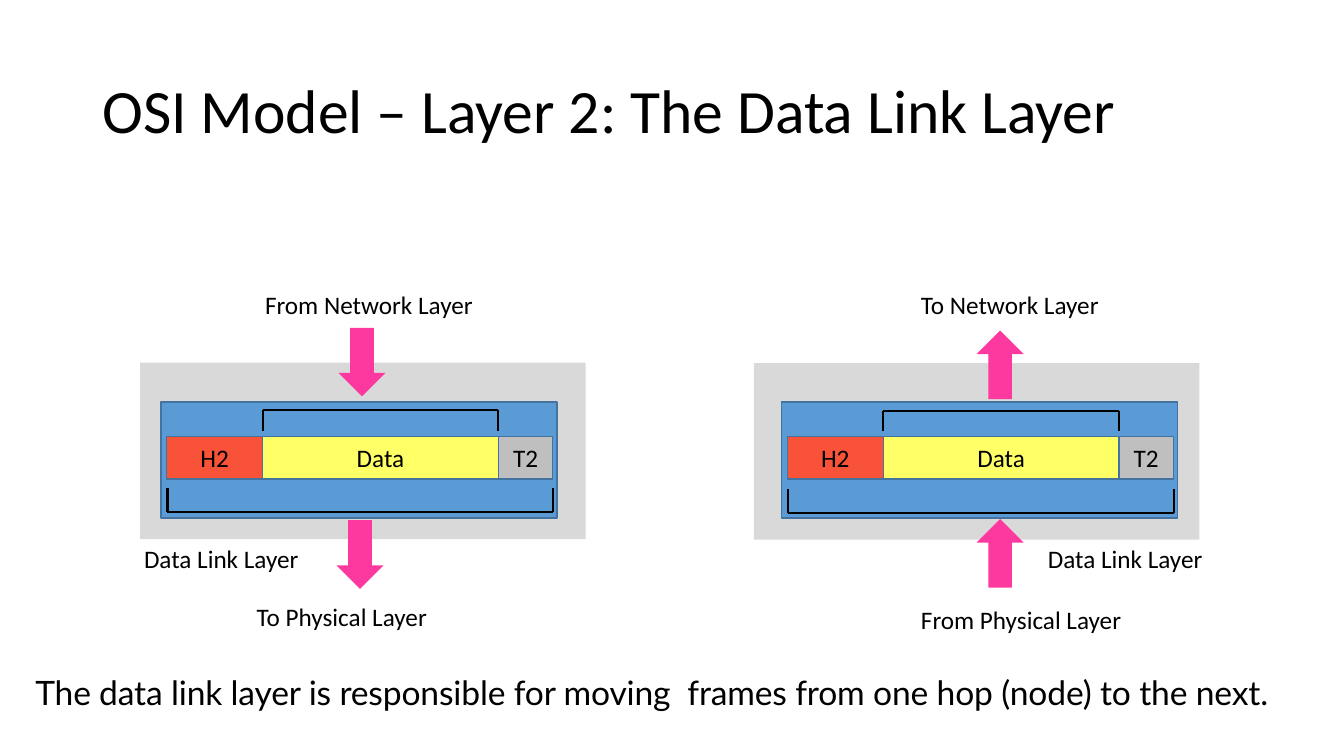
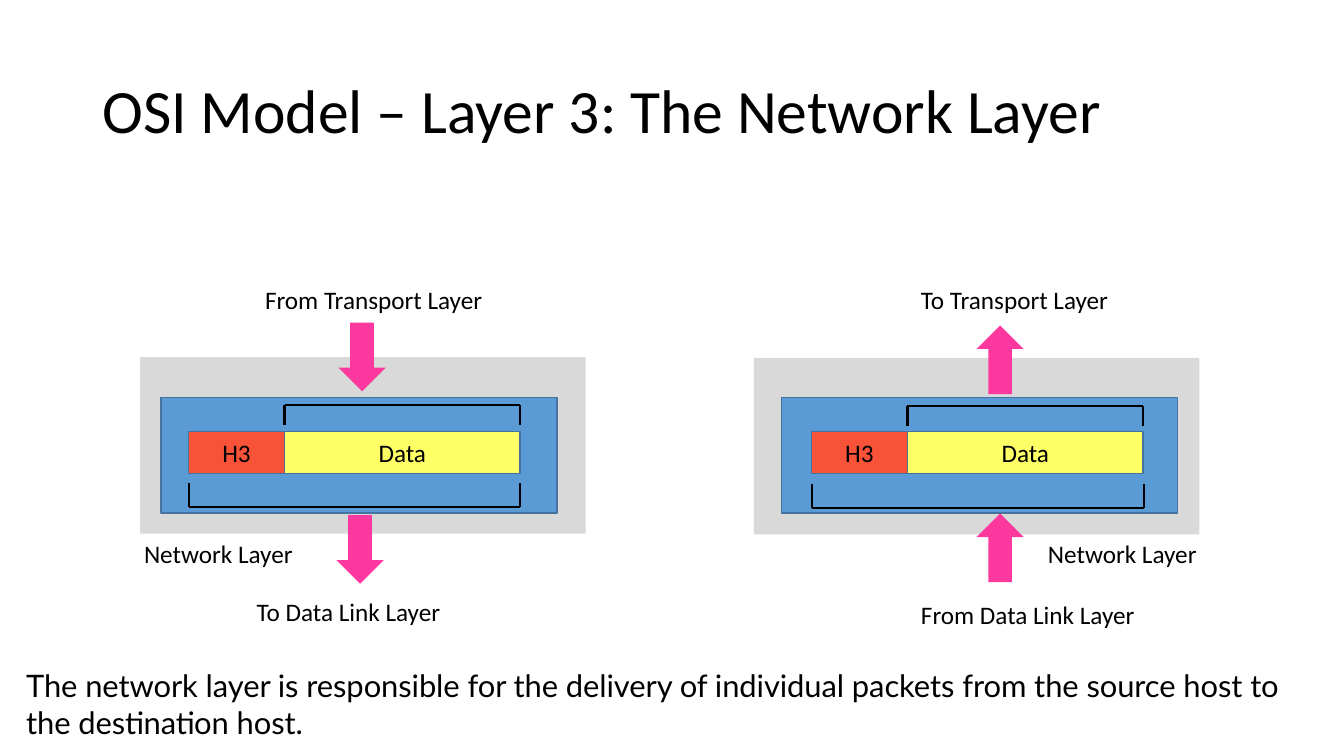
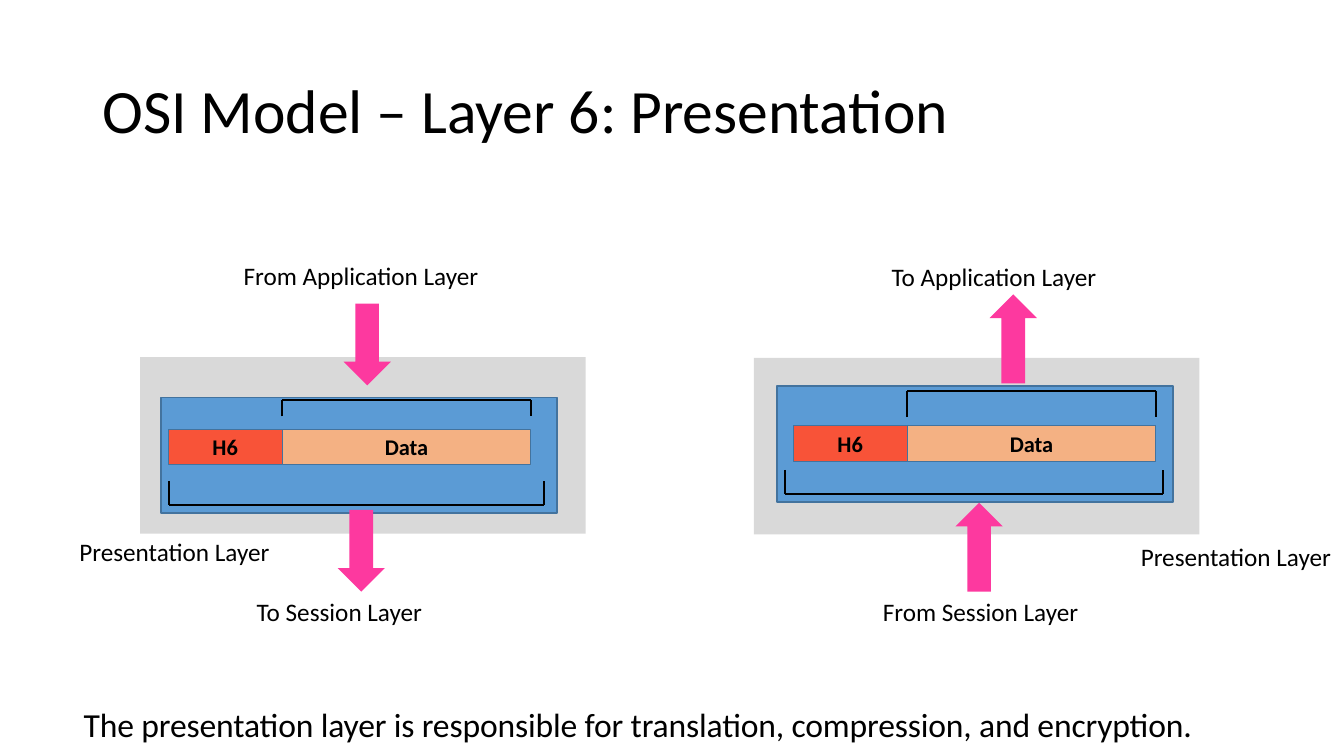
"""Builds three slides showing how OSI layers wrap and unwrap data."""
from dataclasses import dataclass

from lxml.etree import SubElement
from pptx import Presentation
from pptx.dml.color import RGBColor
from pptx.enum.shapes import MSO_CONNECTOR, MSO_SHAPE
from pptx.enum.text import MSO_ANCHOR, PP_ALIGN
from pptx.oxml.ns import qn
from pptx.util import Cm, Pt

COLORS = {
    "text": "000000",
    "panel": "D9D9D9",
    "box": "5B9BD5",
    "border": "43739E",
    "header": "F85338",
    "yellow": "FFFF66",
    "orange": "F4B183",
    "trailer": "BFBFBF",
    "arrow": "FD399F",
}
FONT = "Calibri"
PANEL_SIZE = (11.23, 4.45)
BOX_SIZE = (9.98, 2.92)
ARROW_WIDTH = 1.19
LABEL_HEIGHT = 1.02
LOWER_TIP = 0.61


@dataclass(frozen=True)
class Label:
    text: str
    left: float
    top: float
    width: float


@dataclass(frozen=True)
class Cell:
    text: str
    width: float
    color: str


@dataclass(frozen=True)
class Bracket:
    left: float
    right: float
    y: float


@dataclass(frozen=True)
class Flow:
    down: bool
    panel: tuple[float, float]
    box: tuple[float, float]
    cells: tuple[float, float]
    upper_y: float
    upper_tip: float
    lower: Bracket
    arrows: tuple[tuple[float, float], ...]
    arrow_height: float
    labels: tuple[Label, ...]


@dataclass(frozen=True)
class Caption:
    text: str
    left: float
    top: float
    width: float
    height: float
    size: float
    font: str
    spacing: int


@dataclass(frozen=True)
class Layer:
    title: str
    cells: tuple[Cell, ...]
    cell_height: float
    cell_size: float
    cell_bold: bool
    cell_line: float
    flows: tuple[Flow, ...]
    caption: Caption


LAYERS = (
    Layer(
        "OSI Model – Layer 2: The Data Link Layer",
        (Cell("H2", 2.42, "header"), Cell("Data", 5.94, "yellow"), Cell("T2", 1.37, "trailer")),
        1.07, 18, False, 1,
        (
            Flow(True, (3.53, 9.14), (4.06, 10.13), (4.2, 11), 10.34, 0.51,
                 Bracket(4.22, 13.94, 12.91), ((8.53, 8.26), (8.48, 13.11)), 1.73,
                 (Label("From Network Layer", 6.43, 7.16, 5.79),
                  Label("Data Link Layer", 3.38, 13.56, 4.45),
                  Label("To Physical Layer", 6.22, 15.04, 4.85))),
            Flow(False, (19, 9.15), (19.69, 10.13), (19.84, 11), 10.36, 0.51,
                 Bracket(19.86, 29.59, 12.93), ((24.61, 8.33), (24.61, 13.08)), 1.73,
                 (Label("To Network Layer", 22.96, 7.16, 5.03),
                  Label("Data Link Layer", 26.16, 13.56, 4.45),
                  Label("From Physical Layer", 22.96, 15.11, 5.61))),
        ),
        Caption("The data link layer is responsible for moving  frames from one hop (node) to the next.",
                0.89, 16.92, 32.56, 2.08, 24, "Lato", -10),
    ),
    Layer(
        "OSI Model – Layer 3: The Network Layer",
        (Cell("H3", 2.42, "header"), Cell("Data", 5.94, "yellow")),
        1.07, 18, False, 1,
        (
            Flow(True, (3.53, 9), (4.06, 10.01), (4.75, 10.87), 10.21, 0.51,
                 Bracket(4.77, 13.1, 12.78), ((8.53, 8.13), (8.48, 12.98)), 1.73,
                 (Label("From Transport Layer", 6.43, 7.03, 6.05),
                  Label("Network Layer", 3.38, 13.44, 4.29),
                  Label("To Data Link Layer", 6.22, 14.91, 5.21))),
            Flow(False, (19, 9.02), (19.69, 10.01), (20.45, 10.87), 10.23, 0.51,
                 Bracket(20.47, 28.83, 12.8), ((24.61, 8.2), (24.61, 12.94)), 1.73,
                 (Label("To Transport Layer", 22.96, 7.04, 5.28),
                  Label("Network Layer", 26.16, 13.44, 4.29),
                  Label("From Data Link Layer", 22.96, 14.97, 5.97))),
        ),
        Caption("The network layer is responsible for the delivery of individual packets "
                "from the source host to the destination host.",
                0.66, 16.79, 31.88, 1.93, 22.1, "Lato", -5),
    ),
    Layer(
        "OSI Model – Layer 6: Presentation",
        (Cell("H6", 2.87, "header"), Cell("Data", 6.27, "orange")),
        0.89, 16, True, 0.75,
        (
            Flow(True, (3.53, 9), (4.06, 10.01), (4.24, 10.82), 10.08, 0.41,
                 Bracket(4.27, 13.72, 12.73), ((8.66, 7.65), (8.51, 12.85)), 2.06,
                 (Label("From Application Layer", 5.89, 6.43, 6.5),
                  Label("Presentation Layer", 1.75, 13.39, 5.36),
                  Label("To Session Layer", 6.22, 14.91, 4.72))),
            Flow(False, (19, 9.02), (19.58, 9.73), (19.99, 10.73), 9.85, 0.66,
                 Bracket(19.78, 29.31, 12.45), ((24.94, 7.42), (24.08, 12.67)), 2.24,
                 (Label("To Application Layer", 22.22, 6.45, 5.74),
                  Label("Presentation Layer", 28.5, 13.51, 5.36),
                  Label("From Session Layer", 22, 14.89, 5.49))),
        ),
        Caption("The presentation layer is responsible for translation, compression, and encryption.",
                2.11, 17.75, 30.45, 1.07, 24, FONT, -10),
    ),
)


def rgb(name: str) -> RGBColor:
    """Returns a named colour."""
    return RGBColor.from_string(COLORS[name])


def style_run(r, size: float, font: str = FONT, bold: bool = False) -> None:
    """Sets the font of a run."""
    r.font.name = font
    r.font.size = Pt(size)
    r.font.bold = bold
    r.font.color.rgb = rgb("text")


def add_text(s, text: str, left: float, top: float, width: float, height: float,
             size: float, font: str = FONT, wrap: bool = True):
    """Adds a text box with one paragraph and returns its frame."""
    tf = s.shapes.add_textbox(Cm(left), Cm(top), Cm(width), Cm(height)).text_frame
    tf.word_wrap = wrap
    tf.text = text
    style_run(tf.paragraphs[0].runs[0], size, font)
    return tf


def add_block(s, kind: MSO_SHAPE, left: float, top: float, width: float, height: float,
              color: str, line: float = 0):
    """Adds a filled preset shape, with a border when line is above zero."""
    sp = s.shapes.add_shape(kind, Cm(left), Cm(top), Cm(width), Cm(height))
    sp.shadow.inherit = False
    sp.fill.solid()
    sp.fill.fore_color.rgb = rgb(color)
    if line:
        sp.line.color.rgb = rgb("border")
        sp.line.width = Pt(line)
    else:
        sp.line.fill.background()
    return sp


def add_bracket(s, bracket: Bracket, tip_y: float) -> None:
    """Draws a three-sided bracket whose ends reach tip_y."""
    left, right, y = bracket.left, bracket.right, bracket.y
    points = ((left, tip_y), (left, y), (right, y), (right, tip_y))
    for (x1, y1), (x2, y2) in zip(points, points[1:]):
        line = s.shapes.add_connector(MSO_CONNECTOR.STRAIGHT, Cm(x1), Cm(y1), Cm(x2), Cm(y2))
        line.line.color.rgb = rgb("text")
        line.line.width = Pt(1.5)
        SubElement(line._element.spPr, qn("a:effectLst"))


def add_cells(s, layer: Layer, flow: Flow) -> None:
    """Draws the row of cells and the bracket over the data cell."""
    left, top = flow.cells
    for cell in layer.cells:
        sp = add_block(s, MSO_SHAPE.RECTANGLE, left, top, cell.width, layer.cell_height,
                       cell.color, layer.cell_line)
        tf = sp.text_frame
        tf.text = cell.text
        tf.vertical_anchor = MSO_ANCHOR.MIDDLE
        p = tf.paragraphs[0]
        p.alignment = PP_ALIGN.CENTER
        style_run(p.runs[0], layer.cell_size, bold=layer.cell_bold)
        if cell.text == "Data":
            add_bracket(s, Bracket(left, left + cell.width, flow.upper_y),
                        flow.upper_y + flow.upper_tip)
        left += cell.width


def add_flow(s, layer: Layer, flow: Flow) -> None:
    """Draws one side of the diagram."""
    add_block(s, MSO_SHAPE.RECTANGLE, *flow.panel, *PANEL_SIZE, "panel")
    add_block(s, MSO_SHAPE.RECTANGLE, *flow.box, *BOX_SIZE, "box", 1)
    add_cells(s, layer, flow)
    add_bracket(s, flow.lower, flow.lower.y - LOWER_TIP)
    kind = MSO_SHAPE.DOWN_ARROW if flow.down else MSO_SHAPE.UP_ARROW
    for left, top in flow.arrows:
        add_block(s, kind, left, top, ARROW_WIDTH, flow.arrow_height, "arrow")
    for label in flow.labels:
        add_text(s, label.text, label.left, label.top, label.width, LABEL_HEIGHT, 18, wrap=False)


def add_title(s, title: str) -> None:
    """Adds the slide title."""
    tf = add_text(s, title, 2.33, 1.01, 29.21, 3.68, 44)
    tf.vertical_anchor = MSO_ANCHOR.MIDDLE
    tf.paragraphs[0].line_spacing = 0.9


def add_caption(s, caption: Caption) -> None:
    """Adds the sentence under the diagram."""
    tf = add_text(s, caption.text, caption.left, caption.top, caption.width, caption.height,
                  caption.size, caption.font)
    tf.margin_left = tf.margin_right = tf.margin_top = tf.margin_bottom = 0
    p = tf.paragraphs[0]
    p.space_before = Pt(1)
    p.runs[0].font._element.set("spc", str(caption.spacing))


def main() -> None:
    """Builds and saves the presentation."""
    prs = Presentation()
    prs.slide_width, prs.slide_height = Cm(33.87), Cm(19.05)
    for layer in LAYERS:
        s = prs.slides.add_slide(prs.slide_layouts[6])
        add_title(s, layer.title)
        for flow in layer.flows:
            add_flow(s, layer, flow)
        add_caption(s, layer.caption)
    prs.save("out.pptx")


if __name__ == "__main__":
    main()
